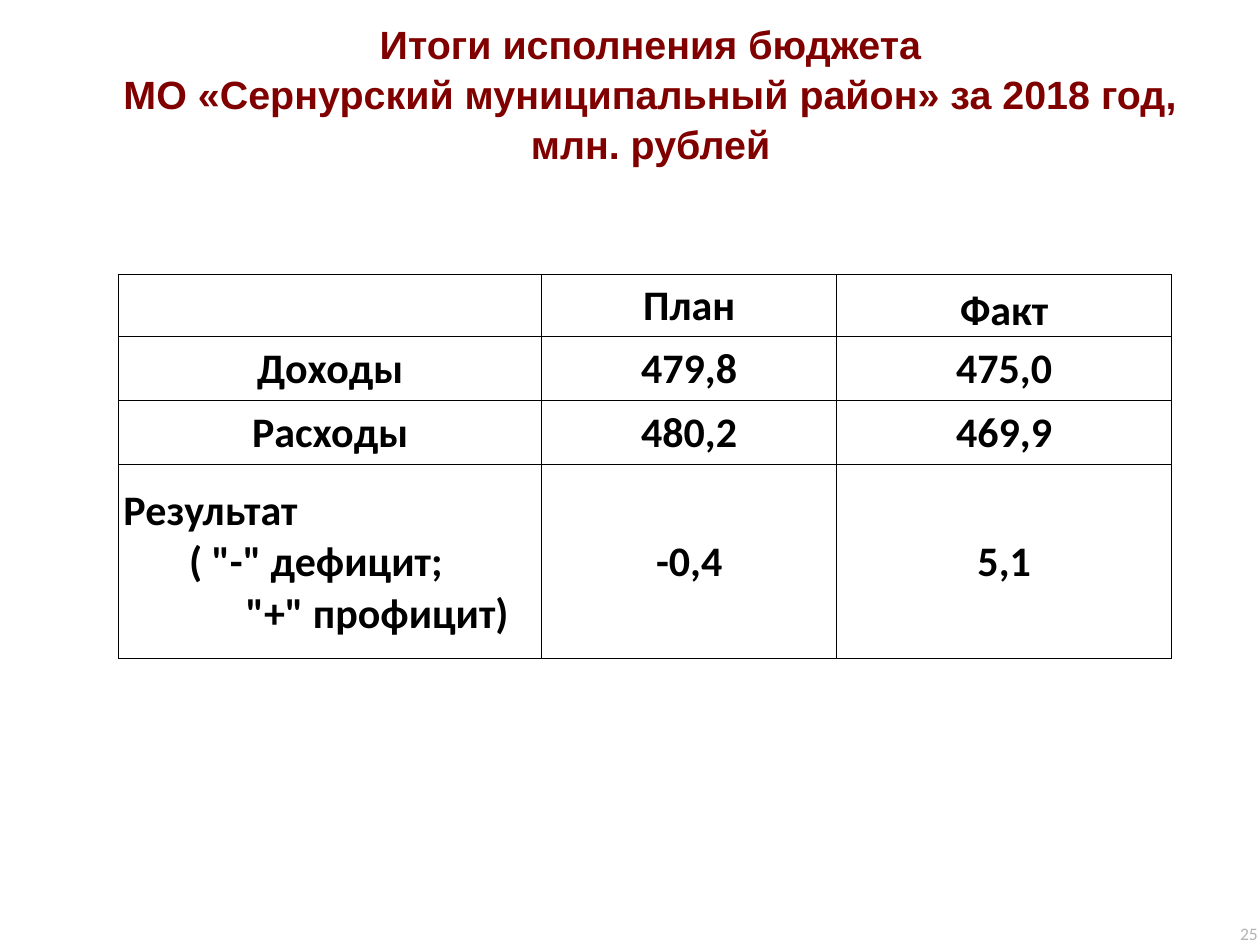
"""Build a slide with a table of planned and actual district budget results."""
import pptx
import pptx.dml.color
import pptx.enum.text
import pptx.oxml
import pptx.oxml.ns
import pptx.util

Inches = pptx.util.Inches
ALIGN = pptx.enum.text.PP_ALIGN
ANCHOR = pptx.enum.text.MSO_ANCHOR


def color(hex_value):
    return pptx.dml.color.RGBColor.from_string(hex_value)


def format_paragraph(paragraph, text, alignment, hex_value, font_format):
    paragraph.text = text
    paragraph.alignment = alignment
    for name, value in font_format.items():
        setattr(paragraph.font, name, value)
    paragraph.font.color.rgb = color(hex_value)


presentation = pptx.Presentation()
presentation.slide_width = Inches(10)
presentation.slide_height = Inches(7.5)
slide = presentation.slides.add_slide(presentation.slide_layouts[5])

title = slide.shapes.title
title_format = {"left": Inches(0.15), "top": Inches(0.16), "width": Inches(10.03), "height": Inches(1.15)}
for name, value in title_format.items():
    setattr(title, name, value)
title.text_frame.vertical_anchor = ANCHOR.MIDDLE
title_text = "Итоги исполнения бюджета\vМО «Сернурский муниципальный район» за 2018 год,\vмлн. рублей"
title_font = {"name": "Arial", "size": pptx.util.Pt(22.5), "bold": True}
format_paragraph(title.text_frame.paragraphs[0], title_text, ALIGN.CENTER, "800000", title_font)
title.text_frame.paragraphs[0].line_spacing = 1.05

page_number = slide.shapes.add_textbox(Inches(9.73), Inches(7.28), Inches(0.35), Inches(0.31))
page_number.text_frame.word_wrap = True
number_font = {"name": "Calibri", "size": pptx.util.Pt(10)}
format_paragraph(page_number.text_frame.paragraphs[0], "25", ALIGN.RIGHT, "B3B3B3", number_font)

rows = [
    ["", "План", "Факт"],
    ["Доходы", "479,8", "475,0"],
    ["Расходы", "480,2", "469,9"],
    ["Результат\n( \"-\" дефицит;\n\"+\" профицит)", "-0,4", "5,1"],
]
column_widths = [3.36, 2.34, 2.66]
row_heights = [0.49, 0.51, 0.51, 1.54]
result_indents = [0.03, 0.55, 1]
table_font = {"name": "Calibri", "size": pptx.util.Pt(24), "bold": True}
cell_format = {
    "margin_left": Inches(0.01), "margin_right": Inches(0.01),
    "margin_top": Inches(0.01), "margin_bottom": 0,
    "vertical_anchor": ANCHOR.MIDDLE,
}
table = slide.shapes.add_table(
    len(rows), len(column_widths), Inches(0.94), Inches(2.18),
    Inches(sum(column_widths)), Inches(sum(row_heights)),
).table
table.first_row = False
table.horz_banding = False
for column, width in zip(table.columns, column_widths):
    column.width = Inches(width)

for row, height, texts in zip(table.rows, row_heights, rows):
    row.height = Inches(height)
    for cell, text in zip(row.cells, texts):
        for name, value in cell_format.items():
            setattr(cell, name, value)
        cell.text = text
        lines = text.split("\n")
        for paragraph, line, indent in zip(cell.text_frame.paragraphs, lines, result_indents):
            alignment = ALIGN.LEFT if len(lines) > 1 else ALIGN.CENTER
            format_paragraph(paragraph, line, alignment, "000000", table_font)
            if len(lines) > 1:
                paragraph._p.get_or_add_pPr().set("marL", str(Inches(indent)))
        cell_properties = cell._tc.get_or_add_tcPr()
        for side in "LRTB":
            cell_properties.append(pptx.oxml.parse_xml(
                f'<a:ln{side} {pptx.oxml.ns.nsdecls("a")} w="{pptx.util.Pt(0.5)}">'
                f'<a:solidFill><a:srgbClr val="000000"/></a:solidFill></a:ln{side}>'
            ))
        cell.fill.background()
table.cell(0, 2).vertical_anchor = ANCHOR.BOTTOM

presentation.save("out.pptx")
